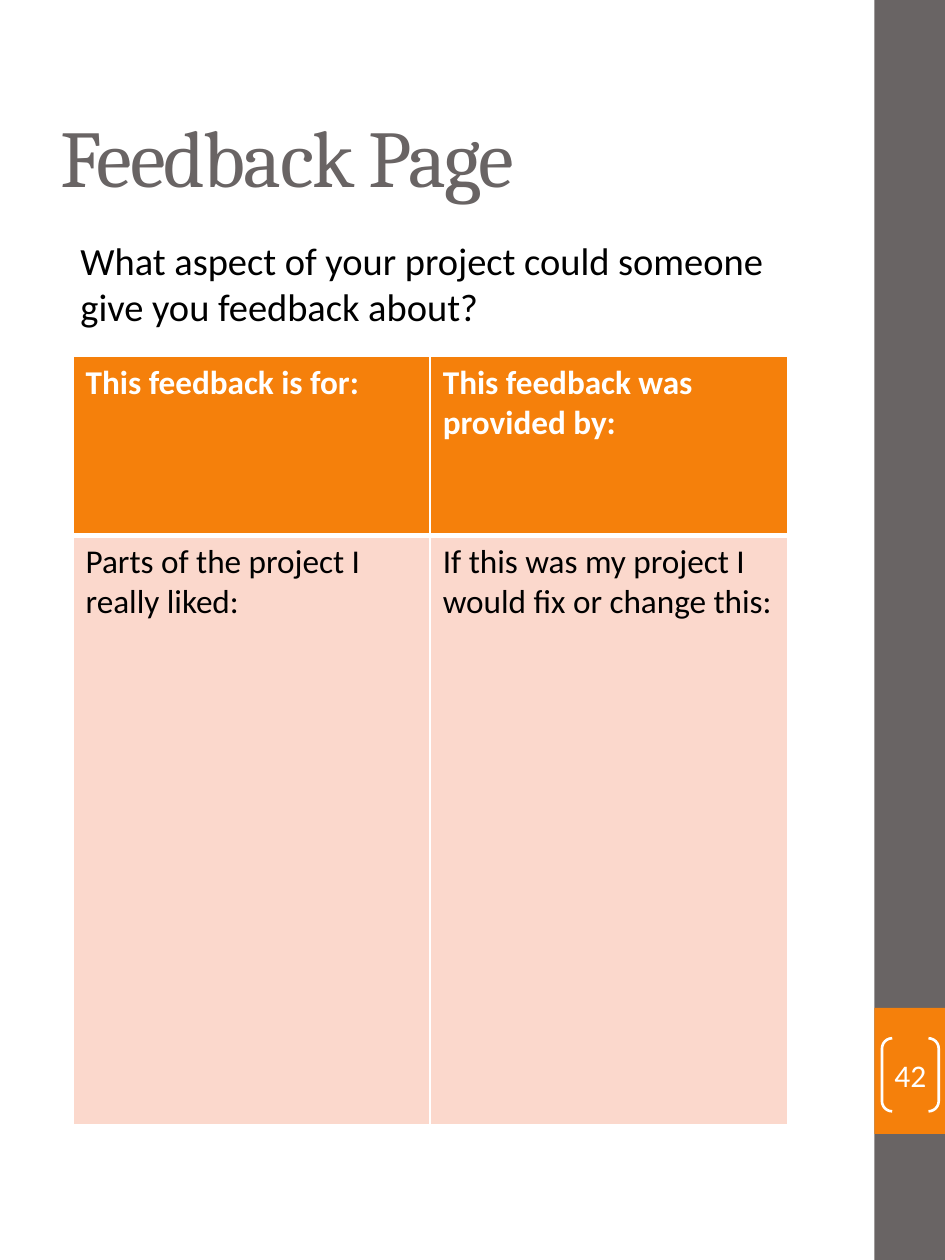
from dataclasses import dataclass

from lxml.etree import SubElement
from pptx import Presentation
from pptx.dml.color import RGBColor
from pptx.enum.shapes import MSO_SHAPE
from pptx.enum.text import MSO_ANCHOR, PP_ALIGN
from pptx.oxml.ns import qn
from pptx.util import Inches, Pt

COLORS = {
    "gray": "696464",
    "orange": "F5800B",
    "pink": "FBD8CC",
    "white": "FFFFFF",
    "black": "000000",
}


@dataclass
class Box:
    x: float
    y: float
    w: float
    h: float

    def emu(self) -> list:
        return [Inches(v) for v in (self.x, self.y, self.w, self.h)]


@dataclass
class Style:
    size: int
    color: str
    name: str = "Calibri"
    bold: bool = False


@dataclass
class Row:
    height: float
    fill: str
    style: Style
    texts: tuple
    edges: dict


def paint(fill, color: str) -> None:
    fill.solid()
    fill.fore_color.rgb = RGBColor.from_string(COLORS[color])


def write(frame, text: str, style: Style):
    """Put one styled run in the frame and return its paragraph."""
    frame.word_wrap = True
    para = frame.paragraphs[0]
    run = para.add_run()
    run.text = text
    formats = {"name": style.name, "size": Pt(style.size), "bold": style.bold}
    for key, value in formats.items():
        setattr(run.font, key, value)
    run.font.color.rgb = RGBColor.from_string(COLORS[style.color])
    return para


def add_text(slide, box: Box, text: str, style: Style, anchor=MSO_ANCHOR.TOP):
    frame = slide.shapes.add_textbox(*box.emu()).text_frame
    frame.vertical_anchor = anchor
    return write(frame, text, style)


def add_bar(slide, box: Box, color: str) -> None:
    bar = slide.shapes.add_shape(MSO_SHAPE.RECTANGLE, *box.emu())
    bar.shadow.inherit = False
    paint(bar.fill, color)
    bar.line.fill.background()


def add_edges(cell, edges: dict) -> None:
    props = cell._tc.get_or_add_tcPr()
    for side in "LRTB":
        line = SubElement(props, qn(f"a:ln{side}"), w=str(Pt(edges.get(side, 1))))
        solid = SubElement(line, qn("a:solidFill"))
        SubElement(solid, qn("a:srgbClr"), val=COLORS["white"])


def add_grid(slide, box: Box, rows: list[Row]) -> None:
    cols = len(rows[0].texts)
    table = slide.shapes.add_table(len(rows), cols, *box.emu()).table
    for col in table.columns:
        col.width = Inches(box.w / cols)
    for r, row in enumerate(rows):
        table.rows[r].height = Inches(row.height)
        for c, text in enumerate(row.texts):
            cell = table.cell(r, c)
            add_edges(cell, row.edges)
            paint(cell.fill, row.fill)
            write(cell.text_frame, text, row.style)


def add_number(slide, box: Box, text: str) -> None:
    mark = slide.shapes.add_shape(MSO_SHAPE.DOUBLE_BRACKET, *box.emu())
    mark.adjustments[0] = 0.18
    mark.shadow.inherit = False
    mark.fill.background()
    paint(mark.line.fill, "white")
    mark.line.width = Pt(1.5)
    frame = mark.text_frame
    for side in ("left", "top", "right", "bottom"):
        setattr(frame, f"margin_{side}", 0)
    frame.vertical_anchor = MSO_ANCHOR.MIDDLE
    para = write(frame, text, Style(18, "white"))
    para.alignment = PP_ALIGN.CENTER


def main() -> None:
    deck = Presentation()
    deck.slide_width, deck.slide_height = Inches(7.5), Inches(10)
    slide = deck.slides.add_slide(deck.slide_layouts[6])

    # Side band
    add_bar(slide, Box(6.94, 0, 0.56, 10), "gray")
    add_bar(slide, Box(6.94, 8, 0.56, 1), "orange")

    # Title, with letters set 1 pt tighter
    title = add_text(slide, Box(0.38, 0.4, 6.25, 1.67), "Feedback Page",
                     Style(46, "gray", "Cambria"), MSO_ANCHOR.MIDDLE)
    title.runs[0].font._element.set("spc", "-100")

    # Question
    ask = add_text(slide, Box(0.42, 1.83, 6.21, 1),
                   "What aspect of your project could someone give you feedback about?",
                   Style(22, "black"))
    ask.space_before = Pt(4.4)
    ask._p.get_or_add_pPr().set("marL", str(Inches(0.12)))

    # Feedback table
    add_grid(slide, Box(0.58, 2.83, 5.67, 6.1), [
        Row(1.42, "orange", Style(19, "white", bold=True),
            ("This feedback is for:", "This feedback was provided by:"), {"B": 3}),
        Row(4.68, "pink", Style(19, "black"),
            ("Parts of the project I really liked:",
             "If this was my project I would fix or change this:"), {"T": 3}),
    ])

    # Page number
    add_number(slide, Box(7, 8.24, 0.45, 0.58), "42")
    deck.save("out.pptx")


if __name__ == "__main__":
    main()
